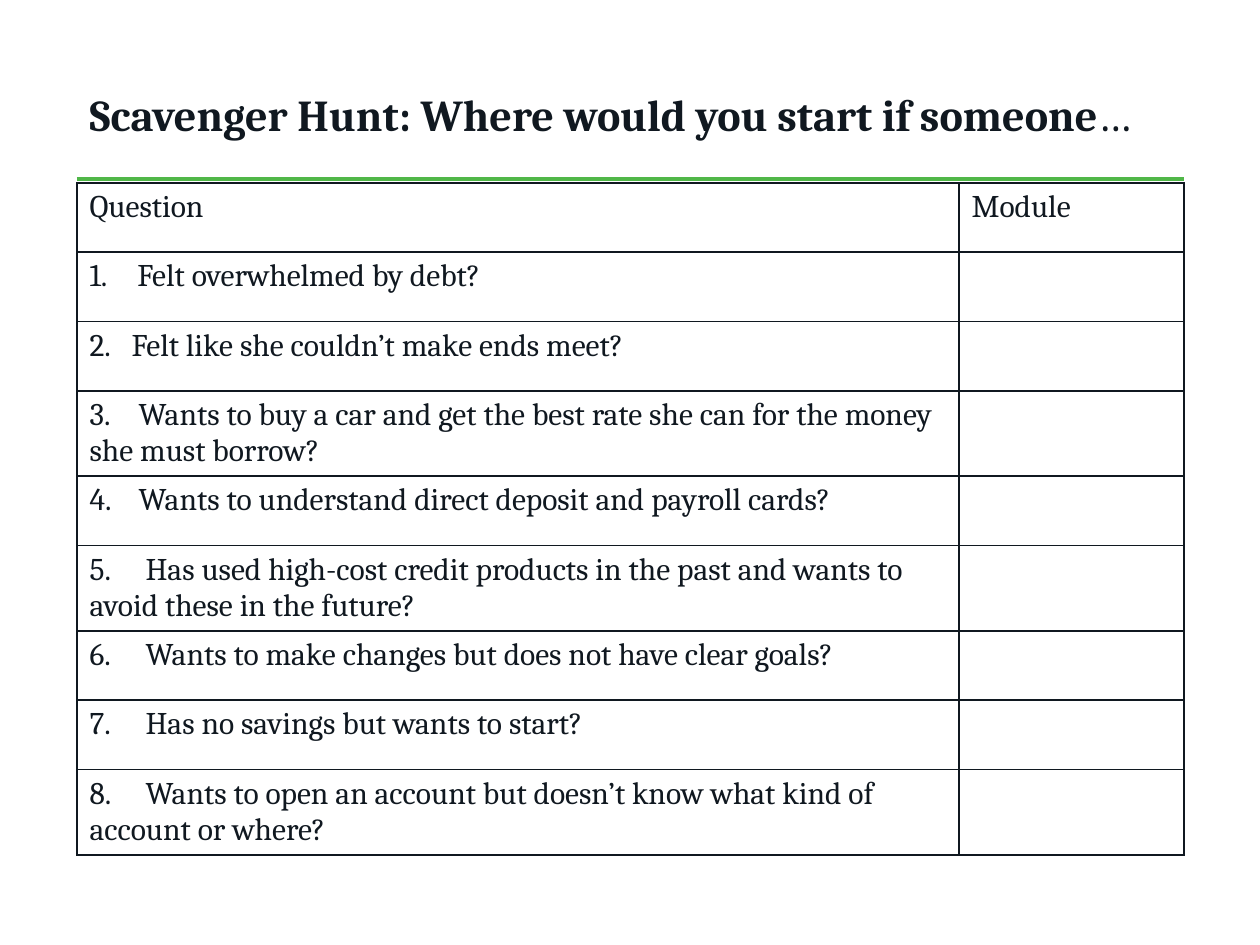
from lxml import etree
from pptx import Presentation
from pptx import util as u
from pptx.dml.color import RGBColor
from pptx.enum import shapes, text
from pptx.oxml import ns

INK = "101820"
GREEN = "50B748"
FONT = "Cambria"
LEFT, WIDTH = 44, 632.5
COLUMNS = (504, 128.5)
ROW_HEIGHT = 39.6
NUMBER_INDENT = 27.36
# Each entry holds a question and the tab stop after its number.
QUESTIONS = [
    ("Felt overwhelmed by debt?", None),
    ("Felt like she couldn’t make ends meet?", 24),
    ("Wants to buy a car and get the best rate she can for the money "
     "she must borrow?", 28),
    ("Wants to understand direct deposit and payroll cards?", 28),
    ("Has used high-cost credit products in the past and wants to "
     "avoid these in the future?", 32),
    ("Wants to make changes but does not have clear goals?", 32),
    ("Has no savings but wants to start?", 32),
    ("Wants to open an account but doesn’t know what kind of "
     "account or where?", 32),
]


def color(value):
    """Turn a hex string into a colour."""
    return RGBColor.from_string(value)


def add_element(parent, tag, **attributes):
    """Append a drawing element with the given attributes."""
    values = {key: str(value) for key, value in attributes.items()}
    return etree.SubElement(parent, ns.qn(tag), values)


def format_span(span, size, bold=False):
    """Apply the slide's typeface and ink to a run."""
    span.font.name = FONT
    span.font.size = u.Pt(size)
    span.font.bold = bold
    span.font.color.rgb = color(INK)


def set_title(page):
    """Place the title and lighten its closing ellipsis."""
    box = page.shapes.title
    box.left, box.top = u.Pt(LEFT), u.Pt(36)
    box.width, box.height = u.Pt(WIDTH), u.Pt(58.3)
    frame = box.text_frame
    frame.vertical_anchor = text.MSO_ANCHOR.MIDDLE
    frame.auto_size = text.MSO_AUTO_SIZE.NONE
    frame.word_wrap = True
    para = frame.paragraphs[0]
    para.alignment = text.PP_ALIGN.LEFT
    for words, bold in (
        ("Scavenger Hunt: Where would you start if someone", True),
        ("…", False),
    ):
        span = para.add_run()
        span.text = words
        format_span(span, 25.2, bold)


def add_rule(page):
    """Draw the green rule under the title."""
    y = u.Pt(102.3)
    rule = page.shapes.add_connector(
        shapes.MSO_CONNECTOR.STRAIGHT, u.Pt(LEFT), y, u.Pt(LEFT + WIDTH), y)
    rule.line.color.rgb = color(GREEN)
    rule.line.width = u.Pt(2)
    add_element(rule._element.spPr, "a:effectLst")


def format_cell(cell):
    """Give a cell four thin borders and no fill."""
    properties = cell._tc.get_or_add_tcPr()
    for side in ("a:lnL", "a:lnR", "a:lnT", "a:lnB"):
        border = add_element(properties, side, w=u.Pt(1))
        fill = add_element(border, "a:solidFill")
        add_element(fill, "a:srgbClr", val=INK)
    cell.fill.background()


def fill_cell(cell, words):
    """Write a cell's text and return its paragraph."""
    cell.text_frame.text = words
    para = cell.text_frame.paragraphs[0]
    for span in para.runs:
        format_span(span, 18)
    return para


def add_question(cell, number, question, stop):
    """Write a question after an automatic or a tabbed number."""
    words = f"{number}.\t{question}" if stop else question
    properties = fill_cell(cell, words)._p.get_or_add_pPr()
    if stop:
        tabs = add_element(properties, "a:tabLst")
        add_element(tabs, "a:tab", pos=u.Pt(stop), algn="l")
    else:
        properties.set("marL", str(u.Pt(NUMBER_INDENT)))
        properties.set("indent", str(-u.Pt(NUMBER_INDENT)))
        add_element(properties, "a:buFont", typeface="+mj-lt")
        add_element(properties, "a:buAutoNum", type="arabicPeriod")


def add_question_table(page):
    """Build the table of questions with an open module column."""
    count = len(QUESTIONS) + 1
    table = page.shapes.add_table(
        count, len(COLUMNS), u.Pt(LEFT), u.Pt(104.5),
        u.Pt(WIDTH), u.Pt(ROW_HEIGHT * count)).table
    table.first_row = table.horz_banding = False
    for column, width in zip(table.columns, COLUMNS):
        column.width = u.Pt(width)
    for row in table.rows:
        row.height = u.Pt(ROW_HEIGHT)
    for cell in table.iter_cells():
        format_cell(cell)
    for index, heading in enumerate(("Question", "Module")):
        fill_cell(table.cell(0, index), heading)
    for number, (question, stop) in enumerate(QUESTIONS, 1):
        add_question(table.cell(number, 0), number, question, stop)


def main():
    """Build and save the deck."""
    deck = Presentation()
    deck.slide_width, deck.slide_height = u.Pt(720), u.Pt(540)
    page = deck.slides.add_slide(deck.slide_layouts[5])
    add_rule(page)
    set_title(page)
    add_question_table(page)
    deck.save("out.pptx")


if __name__ == "__main__":
    main()
